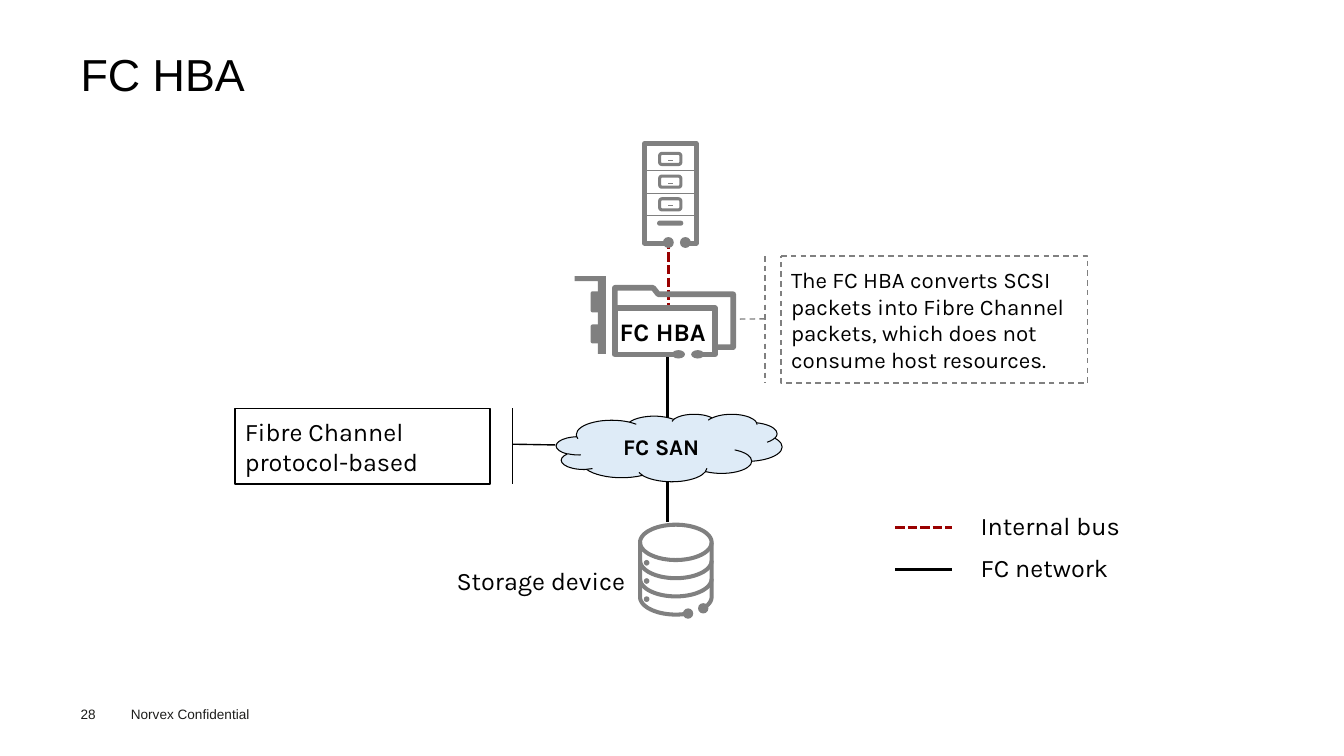
import math
from collections import namedtuple

from lxml import etree
from pptx import Presentation
from pptx.dml.color import RGBColor
from pptx.enum import dml, shapes, text
from pptx.oxml import ns
from pptx.util import Pt

BLACK = RGBColor(0x00, 0x00, 0x00)
FOOTER_INK = RGBColor(0x1D, 0x1D, 0x1B)
GREY = RGBColor(0x80, 0x80, 0x80)
BUS_RED = RGBColor(0x99, 0x00, 0x00)
CLOUD_BLUE = RGBColor(0xDE, 0xEB, 0xF7)

SHAPE = shapes.MSO_SHAPE
DASH = dml.MSO_LINE
Box = namedtuple("Box", "left top width height")


def lengths(*values):
    return [Pt(value) for value in values]


def write(shape, wording, spacing=None, align=text.PP_ALIGN.LEFT, **font):
    frame = shape.text_frame
    frame.text = wording
    para = frame.paragraphs[0]
    para.alignment = align
    if spacing:
        para.line_spacing = spacing
    values = {"name": "Karla", "size": Pt(18), "bold": False, **font}
    color = values.pop("color", BLACK)
    span = para.runs[0]
    for key, value in values.items():
        setattr(span.font, key, value)
    span.font.color.rgb = color
    return frame


def label(page, box, wording, wrap=True, inset=None, **style):
    shape = page.shapes.add_textbox(*lengths(*box))
    frame = write(shape, wording, **style)
    frame.word_wrap = wrap
    if inset is not None:
        for side in ("left", "top", "right", "bottom"):
            setattr(frame, f"margin_{side}", Pt(inset))


def paint(shape, fill=None, color=None, weight=1, dash=None):
    shape.shadow.inherit = False
    if fill is None:
        shape.fill.background()
    else:
        shape.fill.solid()
        shape.fill.fore_color.rgb = fill
    if color is None:
        shape.line.fill.background()
    else:
        shape.line.color.rgb = color
        shape.line.width = Pt(weight)
        if dash:
            shape.line.dash_style = dash
    return shape


def preset(page, kind, box, **look):
    return paint(page.shapes.add_shape(kind, *lengths(*box)), **look)


def outline(page, box, points, close=False, **look):
    places = [(Pt(box.left + x), Pt(box.top + y)) for x, y in points]
    builder = page.shapes.build_freeform(*places[0], scale=1.0)
    builder.add_line_segments(places[1:], close=close)
    return paint(builder.convert_to_shape(), **look)


def dot(page, box, x, y, width, height=None):
    height = height or width
    place = (box.left + x - width / 2, box.top + y - height / 2, width, height)
    preset(page, SHAPE.OVAL, place, fill=GREY)


def wire(page, start, end, color, weight=2.25, dash=None):
    line = page.shapes.add_connector(shapes.MSO_CONNECTOR.STRAIGHT, *lengths(*start, *end))
    line.line.color.rgb = color
    line.line.width = Pt(weight)
    if dash:
        line.line.dash_style = dash
    etree.SubElement(line._element.spPr, ns.qn("a:effectLst"))


def draw_title(page, box):
    title = page.shapes.title
    title.left, title.top, title.width, title.height = lengths(*box)
    frame = write(title, "FC HBA", spacing=0.9, name="Arial", size=Pt(32))
    values = {"margin_left": 0, "margin_top": 0, "margin_right": 0, "margin_bottom": 0,
              "vertical_anchor": text.MSO_ANCHOR.MIDDLE, "auto_size": text.MSO_AUTO_SIZE.NONE}
    for key, value in values.items():
        setattr(frame, key, value)


def draw_footer(page, box):
    style = {"name": "Arial", "size": Pt(9.7), "color": FOOTER_INK}
    label(page, (box.left + 28.8, box.top, 115.2, box.height), "Norvex Confidential", **style)
    label(page, (box.left, box.top + 3.6, 39.6, 11.5), "28", inset=0, **style)


def draw_callout(page, box, wording, size, adjustments, **look):
    shape = preset(page, SHAPE.LINE_CALLOUT_1_BORDER_AND_ACCENT_BAR, box, **look)
    for index, value in enumerate(adjustments):
        shape.adjustments[index] = value
    frame = write(shape, wording, size=Pt(size))
    frame.word_wrap = True
    frame.vertical_anchor = text.MSO_ANCHOR.MIDDLE


def draw_legend(page, box):
    entries = [("Internal bus", BUS_RED, DASH.SQUARE_DOT), ("FC network", BLACK, None)]
    for index, (wording, color, dash) in enumerate(entries):
        row = box.top + index * 30.2
        wire(page, (box.left, row + 24.4), (box.left + 40.3, row + 24.4), color, dash=dash)
        label(page, (box.left + 54, row, 149, 35.3), wording, spacing=1.4)


def draw_server(page, box):
    width, height = box.width, box.height
    gap = (17, 29.2)
    outline(page, box, [(gap[1], height), (width, height), (width, 0), (0, 0), (0, height),
                        (gap[0], height)], color=GREY, weight=3.6)
    for drawer in range(3):
        top = box.top + 7 + 16.2 * drawer
        front = preset(page, SHAPE.ROUNDED_RECTANGLE, (box.left + 10.8, top, 15.1, 7.9),
                       color=GREY, weight=2.2)
        front.adjustments[0] = 0.2
        wire(page, (box.left + 17, top + 5), (box.left + 20, top + 5), GREY, 0.75)
        wire(page, (box.left, top + 12.2), (box.left + width, top + 12.2), GREY, 0.75)
    slot = preset(page, SHAPE.ROUNDED_RECTANGLE, (box.left + 9, box.top + 55, 18.7, 3.6), fill=GREY)
    slot.adjustments[0] = 0.5
    for x in gap:
        dot(page, box, x, height - 0.4, 7.8)


def draw_adapter(page, box):
    outline(page, box, [(88.6, 55.8), (100.4, 55.8), (100.4, 22.7), (28.8, 22.7), (28.8, 55.8),
                        (74.2, 55.8)], color=GREY, weight=4)
    outline(page, box, [(100.8, 50.7), (113.4, 50.7), (113.4, 12.9), (59.8, 12.9), (56.2, 8.3),
                        (28.8, 8.3), (28.8, 23.7)], color=GREY, weight=4)
    for top, height in ((10.8, 15), (34.5, 13.5)):
        preset(page, SHAPE.ROUNDED_RECTANGLE, (box.left + 11.5, box.top + top, 7.9, height), fill=GREY)
    outline(page, box, [(0, 0), (22.3, 0), (22.3, 55.5), (16.6, 55.5), (16.6, 3.6), (0, 3.6)],
            close=True, fill=GREY)
    for x in (74.2, 88):
        dot(page, box, x, 55.8, 9.4, 6)
    label(page, (box.left + 25.2, box.top + 25.2, 76.3, 28.8), "FC HBA", wrap=False, bold=True)


def draw_storage(page, box):
    radius, rise, pitch = box.width / 2, 12.6, 13

    def arc(center, start, end):
        step = 5 if end > start else -5
        angles = [math.radians(angle) for angle in range(start, end + step, step)]
        return [(radius + radius * math.cos(angle), center + rise * math.sin(angle))
                for angle in angles]

    look = {"color": GREY, "weight": 2.9}
    base = 4 * pitch
    left_end, right_end = arc(base, 70, 180), arc(base, 0, 40)
    outline(page, box, left_end + arc(pitch, 180, 360) + right_end, **look)
    for tier in range(1, 4):
        outline(page, box, arc(pitch * tier, 0, 180), **look)
        dot(page, box, 4.7, 14.6 + pitch * tier, 4)
    for x, y in (left_end[0], right_end[-1]):
        dot(page, box, x, y, 7.4)


def draw_network(page, box):
    wire(page, (box.left + 67.2, 171.4), (box.left + 67.2, 218.2), BUS_RED, dash=DASH.SQUARE_DOT)
    wire(page, (box.left + 66.5, 254.9), (box.left + 66.5, 373), BLACK)
    cloud = preset(page, SHAPE.CLOUD, (box.left - 12.8, box.top + 195, 161.3, 48.2),
                   fill=CLOUD_BLUE, color=BLACK, weight=0.75)
    frame = write(cloud, "FC SAN", align=text.PP_ALIGN.CENTER, size=Pt(16), bold=True)
    frame.vertical_anchor = text.MSO_ANCHOR.MIDDLE
    draw_server(page, Box(box.left + 50.2, box.top + 1.8, 36.8, 71))
    draw_storage(page, Box(box.left + 47, box.top + 273.6, 51.1, 66))
    draw_adapter(page, Box(box.left + 0.2, box.top + 96.5, 116, 58))
    label(page, (box.left - 91.2, box.top + 290.9, 140.4, 35.3), "Storage device", spacing=1.4)


def main():
    deck = Presentation()
    deck.slide_width, deck.slide_height = lengths(960, 540)
    page = deck.slides.add_slide(deck.slide_layouts[5])
    draw_title(page, Box(57.6, 35.3, 844.6, 38.9))
    draw_footer(page, Box(57.6, 500.4, 144, 19.4))
    draw_callout(page, Box(167.8, 291.6, 182.2, 54), "Fibre Channel protocol-based", 18,
                 (0.476, 1.089, 0.486, 1.256), color=BLACK)
    draw_callout(page, Box(558, 182.9, 218.9, 90.7),
                 "The FC HBA converts SCSI packets into Fibre Channel packets, "
                 "which does not consume host resources.", 16,
                 (0.495, -0.053, 0.497, -0.156), color=GREY, dash=DASH.DASH)
    draw_legend(page, Box(639.4, 352.1, 203, 65.5))
    draw_network(page, Box(410.2, 100.8, 116, 340))
    deck.save("out.pptx")


if __name__ == "__main__":
    main()
